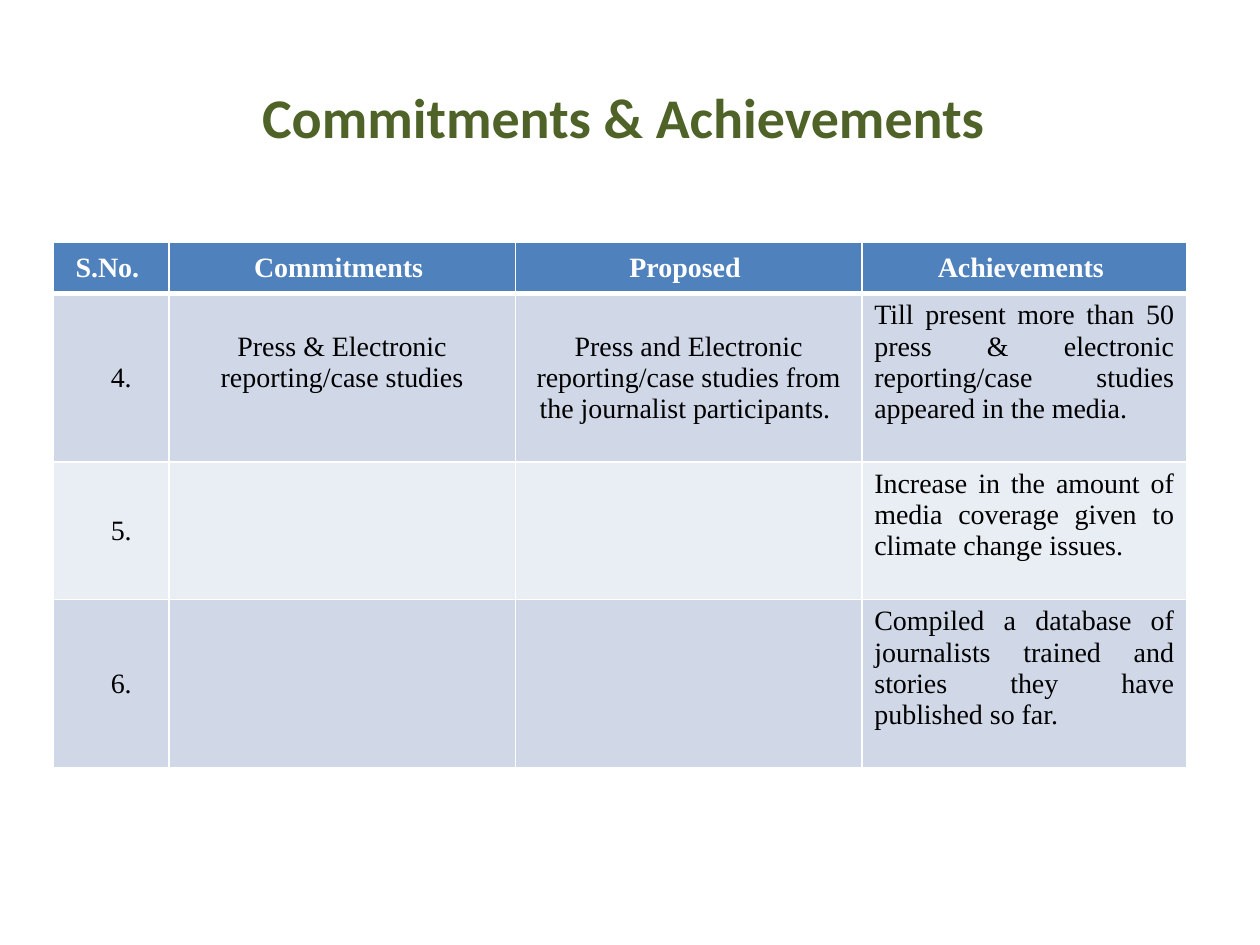
from pptx import Presentation, util as u
from pptx.dml.color import RGBColor
from pptx.enum import text
from pptx.oxml import parse_xml
from pptx.oxml.ns import nsdecls

TITLE = "Commitments & Achievements "
HEADER = ["S.No. ", "Commitments ", "Proposed ", "Achievements "]
ROWS = [
    ["4. ", "Press & Electronic reporting/case studies",
     "Press and Electronic reporting/case studies from the journalist participants. ",
     "Till present more than 50 press & electronic reporting/case studies appeared in the media. "],
    ["5. ", "", "",
     "Increase in the amount of media coverage given to climate change issues. "],
    ["6. ", "", "",
     "Compiled a database of journalists trained and stories they have published so far."],
]
COL_WIDTHS = [0.92, 2.75, 2.75, 2.58]
ROW_HEIGHTS = [0.41, 1.33, 1.09, 1.33]
HEADER_FILL, BANDS = "4F81BD", ["D0D8E8", "E9EDF4"]
NUMBER_INDENT, LINE = 0.32, 0.25


def color(value):
    return RGBColor.from_string(value)


def style_runs(tf, font, size, value, bold, align):
    for p in tf.paragraphs:
        p.alignment = align
        for r in p.runs:
            r.font.name, r.font.size, r.font.bold = font, u.Pt(size), bold
            r.font.color.rgb = color(value)


def set_borders(cell, bottom, top):
    """Draw white cell borders; top and bottom widths are in points."""
    tc_pr = cell._tc.get_or_add_tcPr()
    sides = {"lnL": 1, "lnR": 1, "lnT": top, "lnB": bottom}
    for i, (side, width) in enumerate(sides.items()):
        tc_pr.insert(i, parse_xml(
            f'<a:{side} {nsdecls("a")} w="{u.Pt(width)}"><a:solidFill>'
            f'<a:srgbClr val="FFFFFF"/></a:solidFill></a:{side}>'))


prs = Presentation()
prs.slide_width, prs.slide_height = u.Inches(10), u.Inches(7.5)
s = prs.slides.add_slide(prs.slide_layouts[5])

title = s.shapes.title
title.left, title.top, title.width, title.height = map(u.Inches, (0.5, 0.3, 9, 1.25))
title.text_frame.text = TITLE
title.text_frame.vertical_anchor = text.MSO_ANCHOR.MIDDLE
style_runs(title.text_frame, "Calibri", 32, "4F6228", True, text.PP_ALIGN.CENTER)

grid = [HEADER] + ROWS
table = s.shapes.add_table(
    len(grid), len(HEADER), u.Inches(0.42), u.Inches(1.92),
    u.Inches(sum(COL_WIDTHS)), u.Inches(sum(ROW_HEIGHTS))).table
for column, width in zip(table.columns, COL_WIDTHS):
    column.width = u.Inches(width)
for row, height in zip(table.rows, ROW_HEIGHTS):
    row.height = u.Inches(height)

for i, row in enumerate(grid):
    for j, words in enumerate(row):
        cell = table.cell(i, j)
        is_header = i == 0
        cell.text_frame.text = words
        cell.vertical_anchor = text.MSO_ANCHOR.MIDDLE
        cell.fill.solid()
        cell.fill.fore_color.rgb = color(HEADER_FILL if is_header else BANDS[(i - 1) % 2])
        justified = j == 3 and not is_header
        style_runs(cell.text_frame, "Times New Roman", 16,
                   "FFFFFF" if is_header else "000000", is_header,
                   text.PP_ALIGN.JUSTIFY if justified else text.PP_ALIGN.CENTER)
        if not is_header and j == 0:
            cell.margin_left = u.Inches(NUMBER_INDENT)
        if not is_header and j in (1, 3):
            cell.margin_bottom = u.Inches(0.05 + LINE)
        set_borders(cell, bottom=3 if is_header else 1, top=3 if i == 1 else 1)

prs.save("out.pptx")
